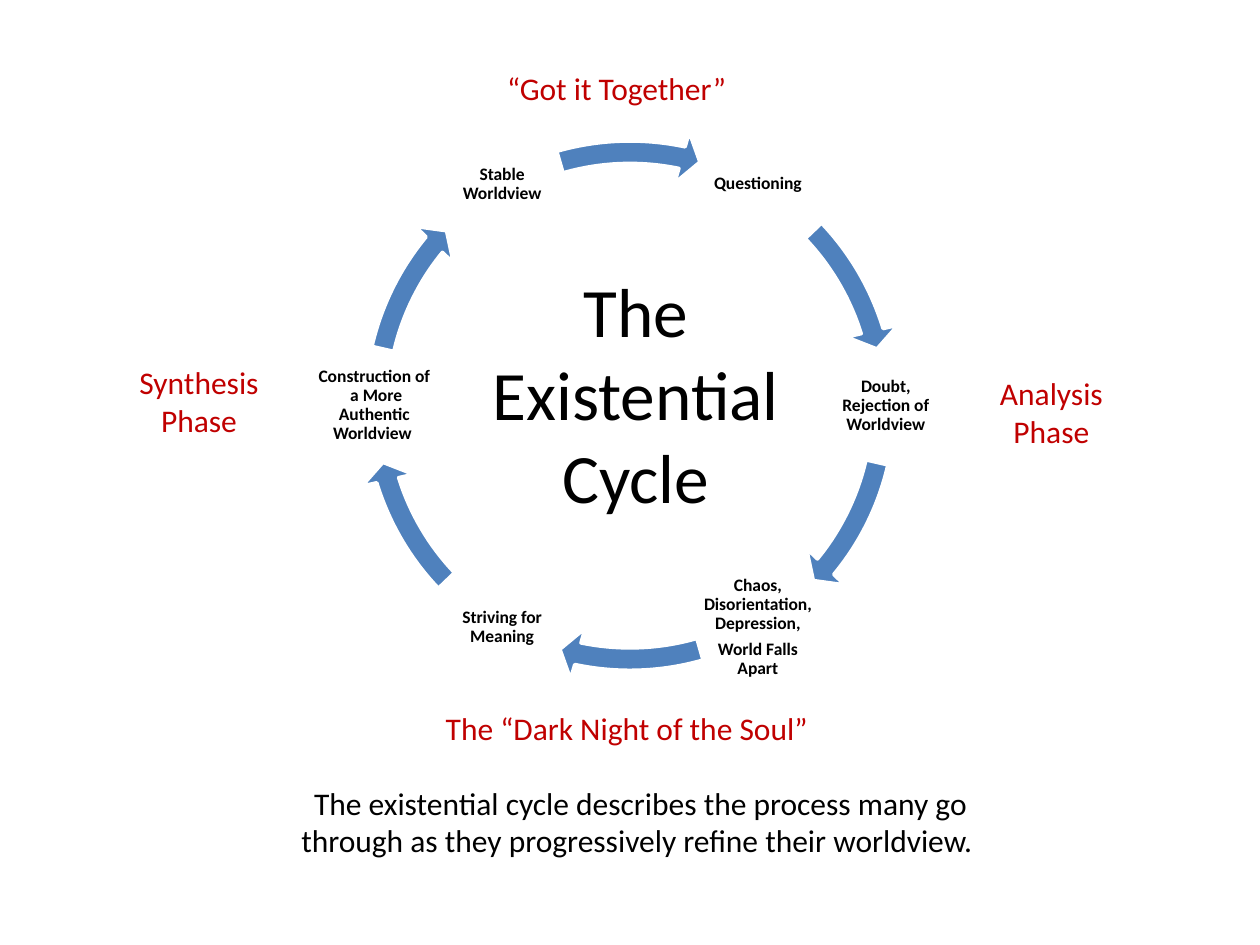
from math import cos, radians, sin

from pptx import Presentation
from pptx.dml.color import RGBColor
from pptx.enum.shapes import MSO_SHAPE
from pptx.enum.text import MSO_ANCHOR, MSO_AUTO_SIZE, PP_ALIGN
from pptx.util import Inches, Pt

BLACK = RGBColor(0x00, 0x00, 0x00)
WHITE = RGBColor(0xFF, 0xFF, 0xFF)
BLUE = RGBColor(0x4F, 0x81, 0xBD)
RED = RGBColor(0xC0, 0x00, 0x00)

CENTER_X, CENTER_Y = 5, 3.22
RING_SIZE = 4.44
LABEL_RADIUS = 2.03
LABEL_SIZE = 0.91
STAGES = [
    ["Questioning"],
    ["Doubt, Rejection of Worldview"],
    ["Chaos, Disorientation, Depression,", "World Falls Apart"],
    ["Striving for Meaning"],
    ["Construction of  a More Authentic Worldview "],
    ["Stable Worldview"],
]
ARROW_SPANS = [(316.38, 342.9), (12.94, 39.46), (73.97, 101.86)]

CAPTIONS = [
    (["Analysis", "Phase"], (7.83, 2.92, 1.03, 0.71), RED, False),
    (["Synthesis", "Phase"], (1, 2.83, 1.16, 0.71), RED, False),
    (["The existential cycle describes the process many go through as they "
      "progressively refine their worldview. "], (2.25, 6.17, 5.67, 0.71), BLACK, True),
    (["The “Dark Night of the Soul”"], (3.42, 5.58, 3.11, 0.4), RED, False),
    (["“Got it Together”"], (3.92, 0.5, 1.95, 0.4), RED, False),
]

LABEL_FRAME = dict(
    word_wrap=True, vertical_anchor=MSO_ANCHOR.MIDDLE,
    margin_left=Inches(0.01), margin_right=Inches(0.01),
    margin_top=Inches(0.01), margin_bottom=Inches(0.01),
)
LABEL_PARAGRAPH = dict(alignment=PP_ALIGN.CENTER, line_spacing=0.9, space_after=Pt(4))
CENTERED = dict(alignment=PP_ALIGN.CENTER)


def apply_format(target, values):
    for name, value in values.items():
        setattr(target, name, value)


def write_text(frame, lines, size, color, paragraph_format, bold=False):
    for index, line in enumerate(lines):
        paragraph = frame.add_paragraph() if index else frame.paragraphs[0]
        apply_format(paragraph, paragraph_format)
        run = paragraph.add_run()
        run.text = line
        apply_format(run.font, dict(name="Calibri", size=Pt(size), bold=bold))
        run.font.color.rgb = color


def add_label(shapes, lines, angle):
    left = CENTER_X + LABEL_RADIUS * cos(radians(angle)) - LABEL_SIZE / 2
    top = CENTER_Y + LABEL_RADIUS * sin(radians(angle)) - LABEL_SIZE / 2
    box = shapes.add_textbox(*map(Inches, (left, top, LABEL_SIZE, LABEL_SIZE)))
    apply_format(box.text_frame, LABEL_FRAME)
    write_text(box.text_frame, lines, 10, BLACK, LABEL_PARAGRAPH, bold=True)


def add_arrow(shapes, start, end):
    left, top = CENTER_X - RING_SIZE / 2, CENTER_Y - RING_SIZE / 2
    arrow = shapes.add_shape(
        MSO_SHAPE.CIRCULAR_ARROW, *map(Inches, (left, top, RING_SIZE, RING_SIZE)))
    adjustments = [4 / 100, 4.17 * 0.6, end * 0.6, start * 0.6, 4.7 / 100]
    for index, value in enumerate(adjustments):
        arrow.adjustments[index] = value
    arrow.shadow.inherit = False
    arrow.fill.solid()
    arrow.fill.fore_color.rgb = BLUE
    arrow.line.color.rgb = WHITE
    arrow.line.width = Pt(2)


def add_cycle(slide):
    shapes = slide.shapes.add_group_shape().shapes
    for index, lines in enumerate(STAGES):
        add_label(shapes, lines, 60 * index - 60)
        half_turns, position = divmod(index, len(ARROW_SPANS))
        start, end = [(angle + 180 * half_turns) % 360 for angle in ARROW_SPANS[position]]
        add_arrow(shapes, start, end)


def add_title(slide):
    title = slide.shapes.title
    apply_format(title, dict(left=Inches(3.42), top=Inches(2.08),
                             width=Inches(3.25), height=Inches(2.08)))
    apply_format(title.text_frame, dict(word_wrap=True, auto_size=MSO_AUTO_SIZE.NONE,
                                        vertical_anchor=MSO_ANCHOR.MIDDLE))
    write_text(title.text_frame, ["The Existential Cycle"], 39.6, BLACK, CENTERED)


def add_caption(slide, lines, bounds, color, wrap):
    box = slide.shapes.add_textbox(*map(Inches, bounds))
    apply_format(box.text_frame, dict(word_wrap=wrap,
                                      auto_size=MSO_AUTO_SIZE.SHAPE_TO_FIT_TEXT))
    write_text(box.text_frame, lines, 18, color, CENTERED)


def main():
    presentation = Presentation()
    presentation.slide_width = Inches(10)
    presentation.slide_height = Inches(7.5)
    slide = presentation.slides.add_slide(presentation.slide_layouts[5])
    add_cycle(slide)
    add_title(slide)
    for caption in CAPTIONS:
        add_caption(slide, *caption)
    presentation.save("out.pptx")


if __name__ == "__main__":
    main()
